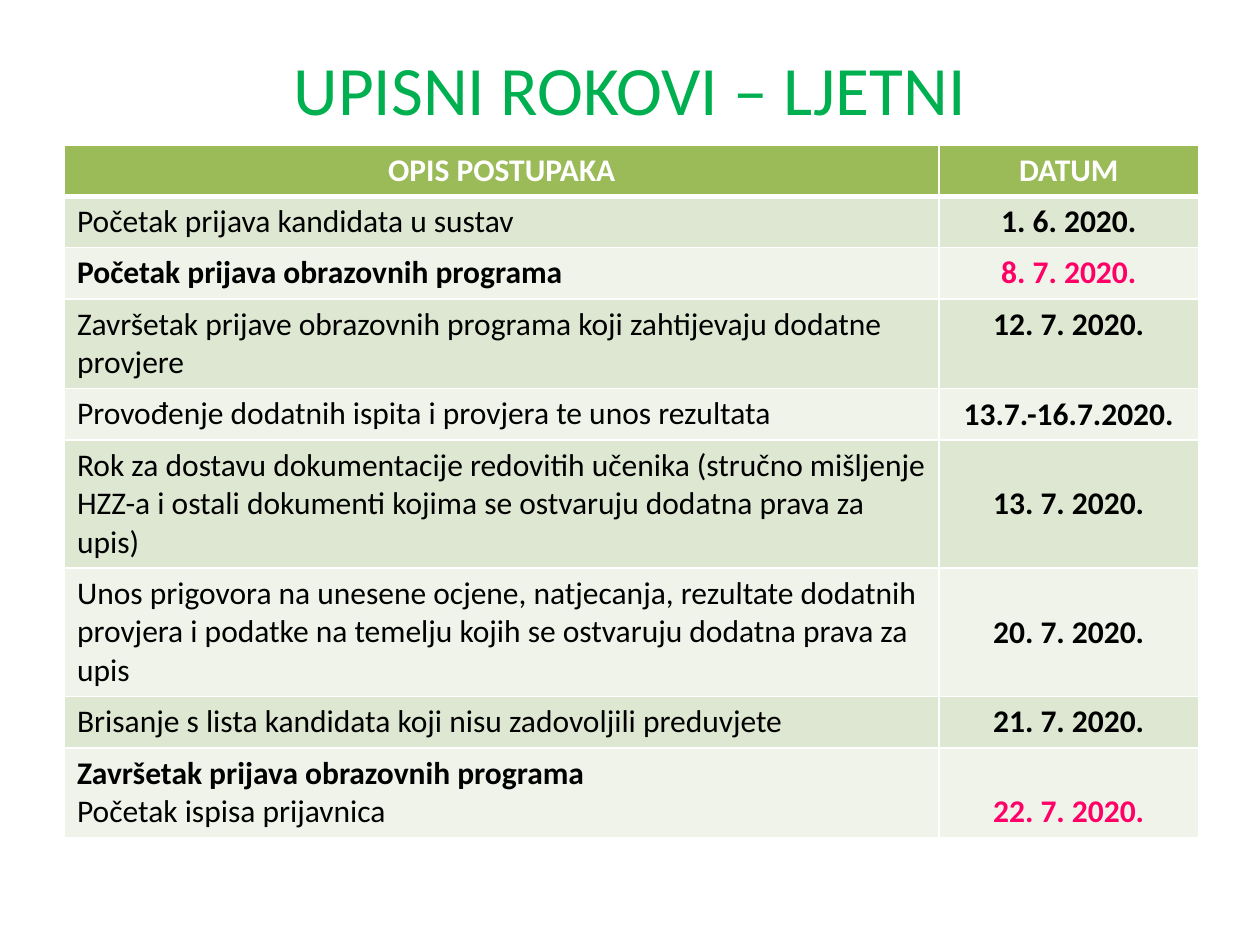
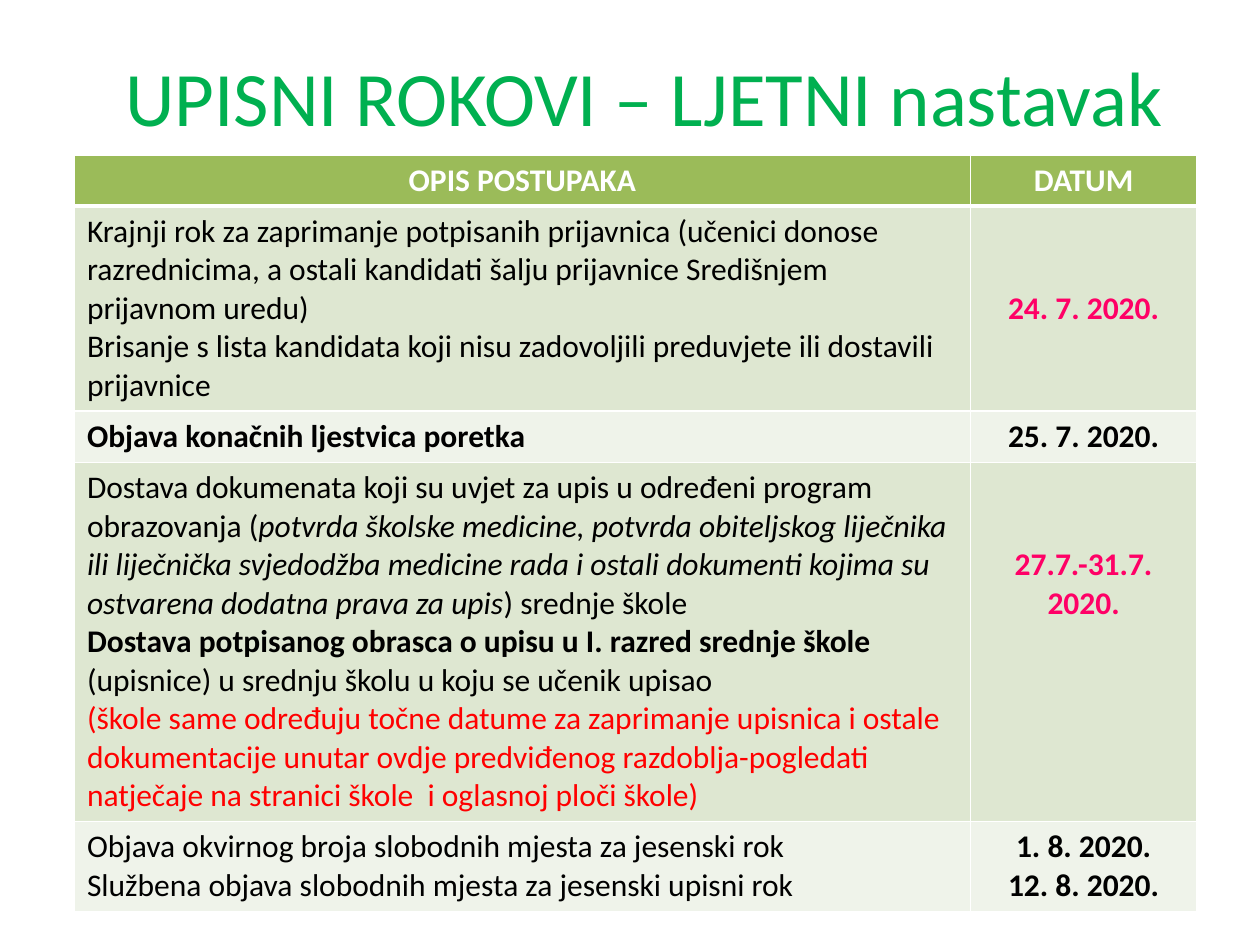
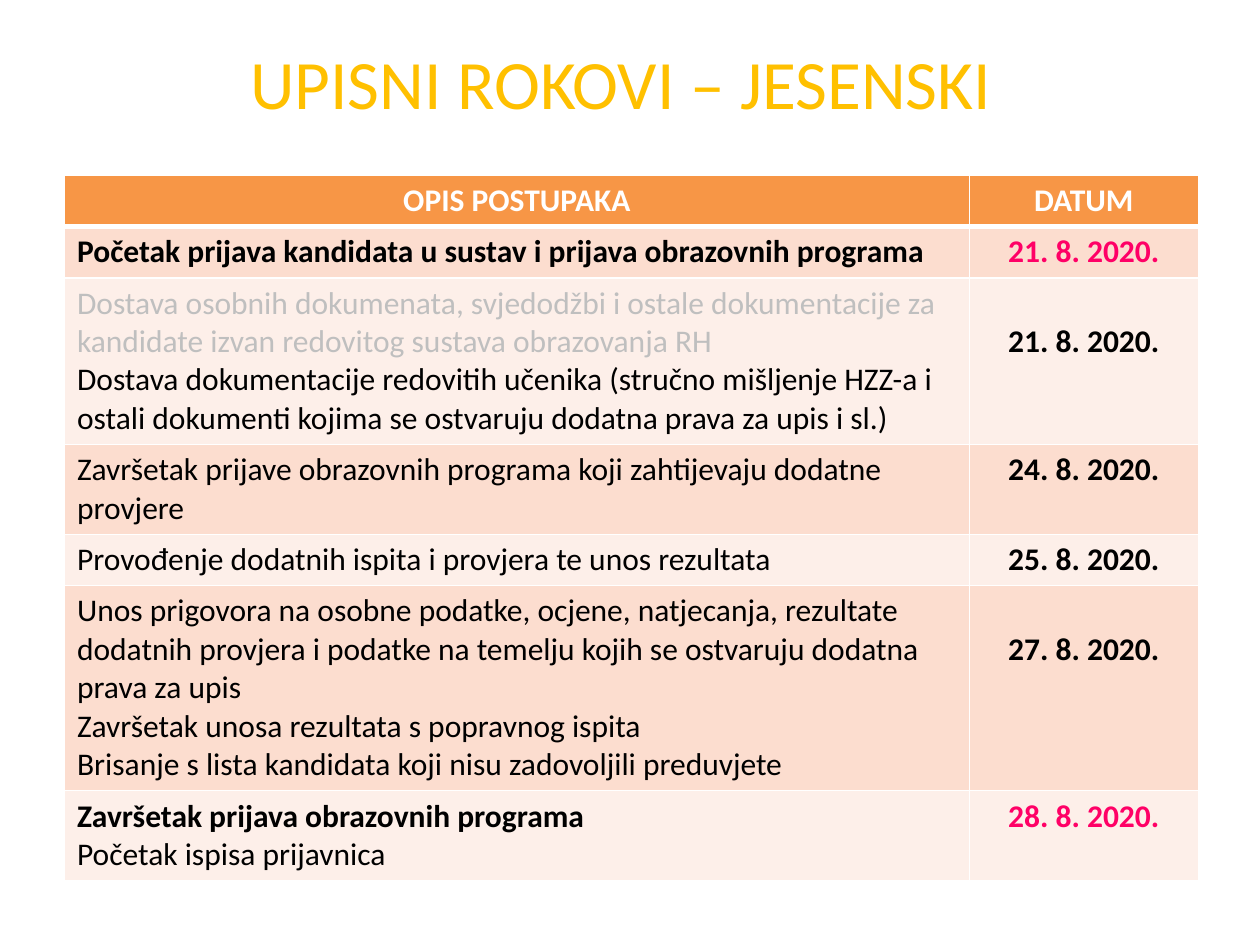
"""Build three slides with tables of school enrolment dates."""
from lxml.etree import SubElement as Sub
from pptx import Presentation
from pptx.dml.color import RGBColor as RGB
from pptx.enum.text import MSO_ANCHOR as Anchor, PP_ALIGN as Align
from pptx.oxml.ns import qn
from pptx.util import Cm, Pt

WHITE = RGB(0xFF, 0xFF, 0xFF)
BLACK = RGB(0, 0, 0)
GREEN = RGB(0x00, 0xB0, 0x50)
GOLD = RGB(0xFF, 0xC0, 0x00)
PINK = RGB(0xFF, 0x00, 0x66)
RED = RGB(0xFF, 0, 0)
GREY = RGB(0xBF, 0xBF, 0xBF)
LEAF = (RGB(0x9B, 0xBB, 0x59), RGB(0xDE, 0xE7, 0xD1), RGB(0xEF, 0xF3, 0xEA))
PEACH = (RGB(0xF7, 0x96, 0x46), RGB(0xFC, 0xDD, 0xCF), RGB(0xFD, 0xEF, 0xE9))

BASE = {"name": "Calibri", "size": Pt(18), "bold": False, "rgb": BLACK}
BOLD = {"bold": True}
SLOPE = {"italic": True}
HEAD = {"bold": True, "rgb": WHITE}
DATE = {"bold": True}
KEY = {"bold": True, "rgb": PINK}

LINE, PAD = 0.775, 0.13
HEADS = ("OPIS POSTUPAKA", "DATUM")

CHECKS = "Završetak prijave obrazovnih programa koji zahtijevaju dodatne provjere"
TESTS = "Provođenje dodatnih ispita i provjera te unos rezultata"
DROP = "Brisanje s lista kandidata koji nisu zadovoljili preduvjete"
CLOSE = [[("Završetak prijava obrazovnih programa", BOLD)], "Početak ispisa prijavnica"]

# Each row: line count, description, lines above the date, date, date style
SUMMER = [
    (1, ["Početak prijava kandidata u sustav"], 0, ["1. 6. 2020."], DATE),
    (1, [[("Početak prijava obrazovnih programa", BOLD)]], 0, ["8. 7. 2020."], KEY),
    (2, [CHECKS], 0, ["12. 7. 2020."], DATE),
    (1, [TESTS], 0, ["13.7.-16.7.2020."], DATE),
    (3, ["Rok za dostavu dokumentacije redovitih učenika (stručno mišljenje HZZ-a i "
         "ostali dokumenti kojima se ostvaruju dodatna prava za upis)"],
     1, ["13. 7. 2020."], DATE),
    (3, ["Unos prigovora na unesene ocjene, natjecanja, rezultate dodatnih provjera i "
         "podatke na temelju kojih se ostvaruju dodatna prava za upis"],
     1, ["20. 7. 2020."], DATE),
    (1, [DROP], 0, ["21. 7. 2020."], DATE),
    (2, CLOSE, 1, ["22. 7. 2020."], KEY),
]
LATER = [
    (5, ["Krajnji rok za zaprimanje potpisanih prijavnica (učenici donose razrednicima, "
         "a ostali kandidati šalju prijavnice Središnjem prijavnom uredu)",
         DROP + " ili dostavili prijavnice"],
     2, ["24. 7. 2020."], KEY),
    (1, [[("Objava konačnih ljestvica poretka", BOLD)]], 0, ["25. 7. 2020."], DATE),
    (9, [["Dostava dokumenata koji su uvjet za upis u određeni program obrazovanja (",
          ("potvrda školske medicine, potvrda obiteljskog liječnika ili liječnička "
           "svjedodžba medicine rada i ostali dokumenti kojima su ostvarena dodatna "
           "prava za upis", SLOPE),
          ") srednje škole"],
         [("Dostava potpisanog obrasca o upisu u I. razred srednje škole ", BOLD),
          "(upisnice) u srednju školu u koju se učenik upisao"],
         [("(škole same određuju točne datume za zaprimanje upisnica i ostale "
           "dokumentacije unutar ovdje predviđenog razdoblja-pogledati natječaje na "
           "stranici škole  i oglasnoj ploči škole)", {"rgb": RED})]],
     2, ["27.7.-31.7.", "2020."], KEY),
    (2, ["Objava okvirnog broja slobodnih mjesta za jesenski rok",
         "Službena objava slobodnih mjesta za jesenski upisni rok"],
     0, ["1. 8. 2020.", "12. 8. 2020."], DATE),
]
AUTUMN = [
    (1, [[("Početak prijava kandidata u sustav i prijava obrazovnih programa", BOLD)]],
     0, ["21. 8. 2020."], KEY),
    (4, [[("Dostava osobnih dokumenata, svjedodžbi i ostale dokumentacije za kandidate "
           "izvan redovitog sustava obrazovanja RH", {"rgb": GREY})],
         "Dostava dokumentacije redovitih učenika (stručno mišljenje HZZ-a i ostali "
         "dokumenti kojima se ostvaruju dodatna prava za upis i sl.)"],
     1, ["21. 8. 2020."], DATE),
    (2, [CHECKS], 0, ["24. 8. 2020."], DATE),
    (1, [TESTS], 0, ["25. 8. 2020."], DATE),
    (5, ["Unos prigovora na osobne podatke, ocjene, natjecanja, rezultate dodatnih "
         "provjera i podatke na temelju kojih se ostvaruju dodatna prava za upis",
         "Završetak unosa rezultata s popravnog ispita", DROP],
     1, ["27. 8. 2020."], DATE),
    (2, CLOSE, 0, ["28. 8. 2020."], KEY),
]

SLIDES = [
    {"title": "UPISNI ROKOVI – LJETNI", "size": 39.6, "tint": GREEN,
     "box": (1.27, 0.76, 22.86, 2.01), "at": (1.3, 2.92), "cols": (17.63, 5.23),
     "fills": LEAF, "rows": SUMMER},
    {"title": "UPISNI ROKOVI – LJETNI nastavak", "size": 44, "tint": GREEN,
     "box": (0.89, 0.76, 24.21, 2.36), "at": (1.5, 3.12), "cols": (18.06, 4.57),
     "fills": LEAF, "rows": LATER},
    {"title": "UPISNI ROKOVI – JESENSKI", "size": 39.6, "tint": GOLD,
     "box": (1.09, 0.74, 22.86, 1.8), "at": (1.3, 3.53), "cols": (18.24, 4.62),
     "fills": PEACH, "rows": AUTUMN},
]


def write(frame, paras, style, align):
    """Fill a text frame with paragraphs of plain or styled runs."""
    for num, para in enumerate(paras):
        spot = frame.add_paragraph() if num else frame.paragraphs[0]
        spot.alignment = align
        for part in [para] if isinstance(para, str) else para:
            text, extra = (part, {}) if isinstance(part, str) else part
            run = spot.add_run()
            run.text = text
            for key, val in {**BASE, **style, **extra}.items():
                setattr(run.font.color if key == "rgb" else run.font, key, val)


def paint(cell, fill, base):
    """Give a cell white borders and a solid fill."""
    props = cell._tc.get_or_add_tcPr()
    for side, width in {"L": 1, "R": 1, "T": 1, "B": base}.items():
        line = Sub(props, qn("a:ln" + side), w=str(Pt(width)))
        Sub(Sub(line, qn("a:solidFill")), qn("a:srgbClr"), val=str(WHITE))
    cell.fill.solid()
    cell.fill.fore_color.rgb = fill


def add_title(slide, data):
    """Place the centred slide title."""
    frame = slide.shapes.add_textbox(*map(Cm, data["box"])).text_frame
    frame.word_wrap = True
    frame.vertical_anchor = Anchor.MIDDLE
    style = {"size": Pt(data["size"]), "rgb": data["tint"]}
    write(frame, [data["title"]], style, Align.CENTER)


def add_dates(slide, data):
    """Place the table of steps and dates."""
    rows, cols, fills = data["rows"], data["cols"], data["fills"]
    highs = [n * LINE + 2 * PAD for n in [1] + [row[0] for row in rows]]
    size = (sum(cols), sum(highs))
    table = slide.shapes.add_table(len(highs), 2, *map(Cm, data["at"] + size)).table
    for col, width in zip(table.columns, cols):
        col.width = Cm(width)
    for num, high in enumerate(highs):
        table.rows[num].height = Cm(high)
        fill = fills[0] if num == 0 else fills[2 - num % 2]
        for cell in table.rows[num].cells:
            paint(cell, fill, 1 if num else 3)
    for col, head in enumerate(HEADS):
        write(table.cell(0, col).text_frame, [head], HEAD, Align.CENTER)
    for num, (_, steps, skip, dates, style) in enumerate(rows, 1):
        write(table.cell(num, 0).text_frame, steps, {}, Align.LEFT)
        cell = table.cell(num, 1)
        cell.margin_top = Cm(PAD + skip * LINE)
        write(cell.text_frame, dates, style, Align.CENTER)


def main():
    """Build and save the slides."""
    deck = Presentation()
    deck.slide_width, deck.slide_height = Cm(25.4), Cm(19.05)
    for data in SLIDES:
        slide = deck.slides.add_slide(deck.slide_layouts[6])
        add_title(slide, data)
        add_dates(slide, data)
    deck.save("out.pptx")


if __name__ == "__main__":
    main()
